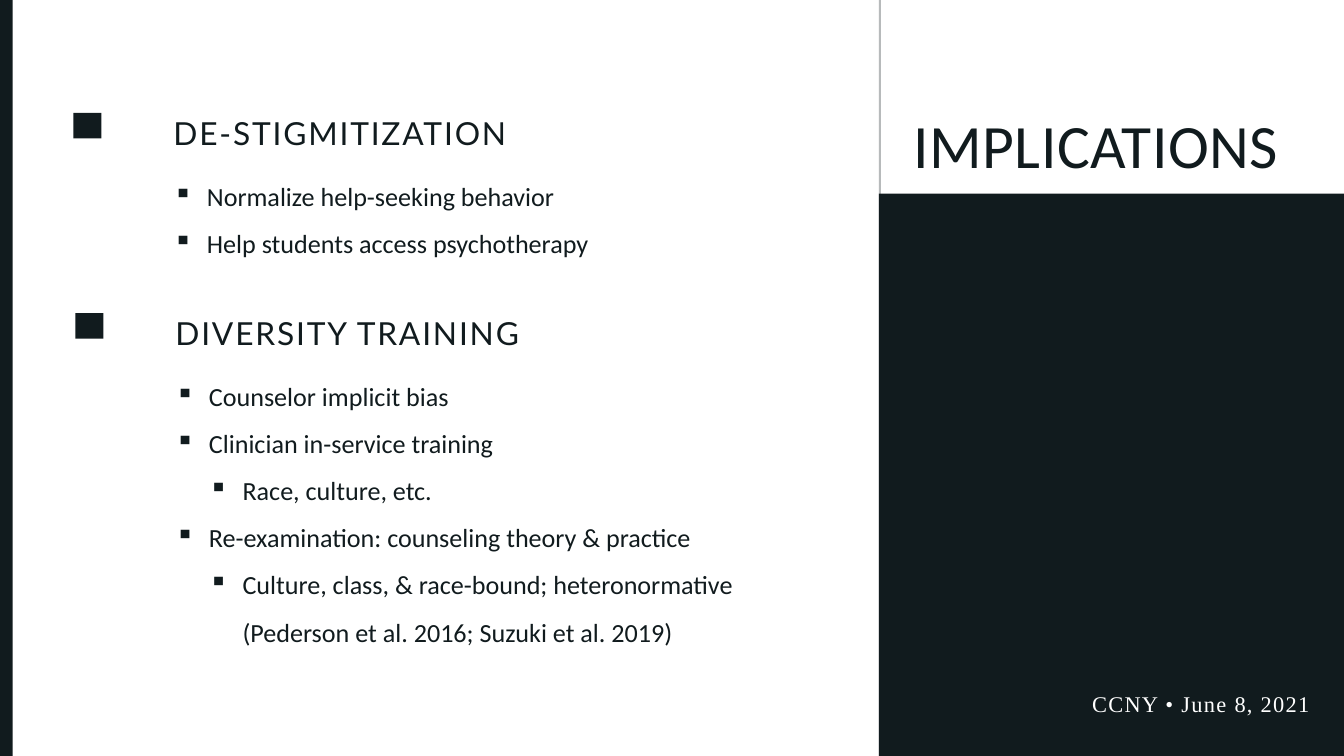
"""Build the Implications slide with two bulleted sections and a dark side panel."""
from dataclasses import dataclass

from lxml import etree
from pptx import Presentation
from pptx.dml.color import RGBColor
from pptx.enum import shapes, text
from pptx.oxml import ns
from pptx.util import Inches, Pt


@dataclass(frozen=True)
class Theme:
    ink: RGBColor = RGBColor.from_string("111B1E")
    paper: RGBColor = RGBColor.from_string("FFFFFF")
    heading_font: str = "Lato"
    body_font: str = "Calibri"
    footer_font: str = "Times New Roman"
    title_size: float = 66
    heading_size: float = 34
    body_size: float = 28
    footer_size: float = 24


THEME = Theme()
DESTIGMATIZATION = [
    (0, "Normalize help-seeking behavior"),
    (0, "Help students access psychotherapy"),
]
DIVERSITY = [
    (0, "Counselor implicit bias"),
    (0, "Clinician in-service training"),
    (1, "Race, culture, etc."),
    (0, "Re-examination: counseling theory & practice"),
    (1, "Culture, class, & race-bound; heteronormative "
        "(Pederson et al. 2016; Suzuki et al. 2019)"),
]


def add_block(slide, left, top, width, height, opacity=None):
    """Add a plain rectangle in the ink colour, with opacity in percent."""
    block = slide.shapes.add_shape(
        shapes.MSO_SHAPE.RECTANGLE,
        Inches(left), Inches(top), Inches(width), Inches(height))
    block.shadow.inherit = False
    block.line.fill.background()
    block.fill.solid()
    block.fill.fore_color.rgb = THEME.ink
    if opacity is not None:
        color = block.fill._xPr.find(".//" + ns.qn("a:srgbClr"))
        etree.SubElement(color, ns.qn("a:alpha"), val=str(opacity * 1000))


def add_frame(slide, left, top, width, height):
    """Add a wrapping text box without margins and return its frame."""
    frame = slide.shapes.add_textbox(
        Inches(left), Inches(top), Inches(width), Inches(height)).text_frame
    frame.word_wrap = True
    frame.auto_size = text.MSO_AUTO_SIZE.SHAPE_TO_FIT_TEXT
    frame.margin_left = frame.margin_right = 0
    frame.margin_top = frame.margin_bottom = 0
    return frame


def style(paragraph, font_name, size, spacing, color=THEME.ink, tracking=0):
    """Set line spacing and the look of every run in a paragraph."""
    paragraph.line_spacing = spacing
    for run in paragraph.runs:
        run.font.name = font_name
        run.font.size = Pt(size)
        run.font.color.rgb = color
        if tracking:
            run.font._element.set("spc", str(round(tracking * 100)))


def add_bullet(paragraph, level):
    """Give a paragraph a hanging square bullet."""
    paragraph.level = level
    properties = paragraph._p.get_or_add_pPr()
    properties.set("marL", str(Inches(0.5 * (level + 1))))
    properties.set("indent", str(Inches(-0.5)))
    etree.SubElement(properties, ns.qn("a:buChar"), char="▪")


def add_line(slide, wording, box, font_name, size, spacing, **look):
    """Add a one-line text box and return its paragraph."""
    frame = add_frame(slide, *box)
    frame.text = wording
    style(frame.paragraphs[0], font_name, size, spacing, **look)
    return frame.paragraphs[0]


def add_section(slide, left, top, heading, points, list_height):
    """Add a square marker, a heading and its bulleted points."""
    text_left = left + 1.49
    add_block(slide, left, top, 0.42, 0.38)
    add_line(slide, heading, (text_left, top - 0.04, 9.03, 0.59),
             THEME.heading_font, THEME.heading_size, Pt(44.2), tracking=2)
    frame = add_frame(slide, text_left, top + 0.77, 9.03, list_height)
    frame.text = "\n".join(point for _, point in points)
    for paragraph, (level, _) in zip(frame.paragraphs, points):
        add_bullet(paragraph, level)
        style(paragraph, THEME.body_font, THEME.body_size, 1.5)


def main():
    """Compose the slide and save it."""
    deck = Presentation()
    deck.slide_width, deck.slide_height = Inches(20), Inches(11.25)
    slide = deck.slides.add_slide(deck.slide_layouts[6])

    add_section(slide, 1.12, 4.66, "DIVERSITY TRAINING", DIVERSITY, 4.17)
    add_block(slide, 13.08, -0.72, 0.03, 12.7, opacity=30)
    add_block(slide, -0.54, -0.69, 0.73, 12.56)
    add_section(slide, 1.09, 1.68, "DE-STIGMITIZATION", DESTIGMATIZATION, 1.34)
    add_line(slide, "IMPLICATIONS", (13.59, 1.04, 6.25, 1.49),
             THEME.body_font, THEME.title_size, 1.5, tracking=0.6)
    add_block(slide, 13.08, 2.88, 7.8, 8.97)
    footer = add_line(slide, "CCNY • June 8, 2021", (14.08, 10.21, 5.41, 1.61),
                      THEME.footer_font, THEME.footer_size, Pt(33.6),
                      color=THEME.paper, tracking=1.4)
    footer.alignment = text.PP_ALIGN.RIGHT

    deck.save("out.pptx")


if __name__ == "__main__":
    main()
